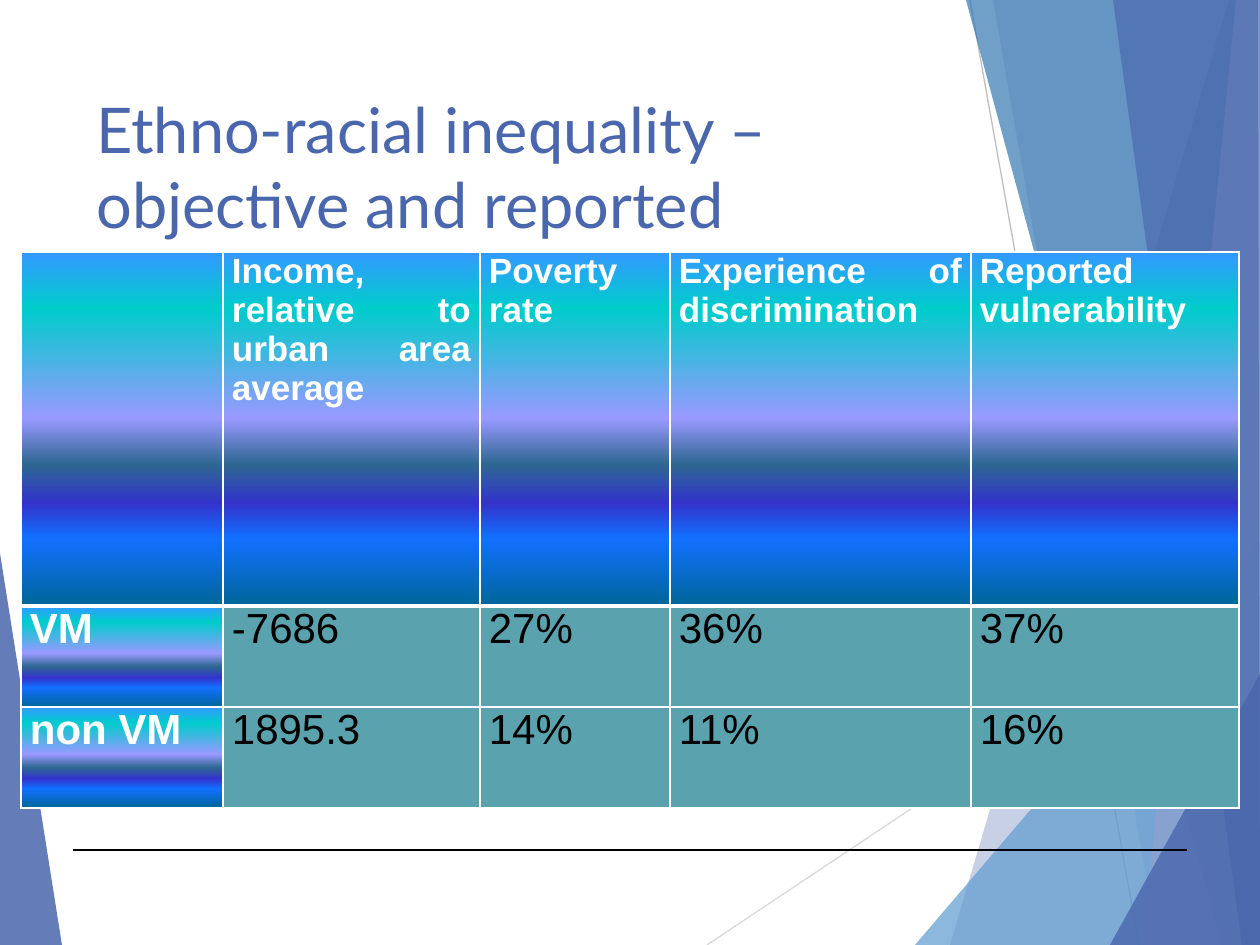
from lxml import etree
from pptx import Presentation, util as u
from pptx.dml.color import RGBColor
from pptx.enum import shapes, text
from pptx.oxml.ns import qn

# Content
TITLE = "Ethno-racial inequality – objective and reported"
ROWS = [
    ["", "Income, relative to urban area average", "Poverty rate",
     "Experience of discrimination", "Reported vulnerability"],
    ["VM", "-7686", "27%", "36%", "37%"],
    ["non VM", "1895.3", "14%", "11%", "16%"],
]
COL_WIDTHS = [202, 257, 190, 301, 268]
ROW_HEIGHTS = [354, 101, 101]
TABLE_LEFT, TABLE_TOP = 21, 252
GRADIENT = [(0, "3399FF"), (16, "00CCCC"), (47, "9999FF"), (60, "2E6792"),
            (71, "3333CC"), (81, "1170FF"), (100, "006699")]
BLUE, TEAL, WHITE, BLACK = "4A66AC", "5AA2AE", "FFFFFF", "000000"

# Backdrop, back to front: facets (points, colour, opacity) and rays (ends, colour)
W, H = 1260, 945
FACETS_LEFT = [([(0, 553), (62, H), (0, H)], BLUE, 85)]
RAYS = [((707, H, W, 576), "D9D9D9"), ((970, 0, 1139, H), "BFBFBF")]
FACETS_RIGHT = [
    ([(1229, 0), (950, H), (W, H), (W, 0)], BLUE, 30),
    ([(993, 0), (1158, H), (W, H), (W, 0)], BLUE, 20),
    ([(915, H), (W, 541), (W, H)], "629DD1", 72),
    ([(966, 0), (1222, H), (W, H), (W, 0)], "3477B2", 70),
    ([(1236, 0), (1143, H), (W, H), (W, 0)], "90A2CF", 70),
    ([(1113, 0), (1242, H), (W, H), (1258, 0)], BLUE, 65),
    ([(1110, H), (W, 674), (W, H)], BLUE, 80),
]
FOOTER_RULE = (73, 850, 1187, 850)

SCALE = 914400 / 126


def px(n):
    return u.Emu(round(n * SCALE))


def rgb(value):
    return RGBColor.from_string(value)


def add_facet(slide, points, color, opacity):
    builder = slide.shapes.build_freeform(*points[0], scale=SCALE)
    builder.add_line_segments(points[1:], close=True)
    facet = builder.convert_to_shape()
    facet.shadow.inherit = False
    facet.line.fill.background()
    facet.fill.solid()
    facet.fill.fore_color.rgb = rgb(color)
    solid_color = facet._element.spPr.find(".//" + qn("a:srgbClr"))
    etree.SubElement(solid_color, qn("a:alpha"), val=str(opacity * 1000))


def add_line(slide, ends, color):
    line = slide.shapes.add_connector(
        shapes.MSO_CONNECTOR.STRAIGHT, *[px(n) for n in ends])
    line.line.color.rgb = rgb(color)
    line.line.width = u.Pt(0.75)
    etree.SubElement(line._element.spPr, qn("a:effectLst"))


def add_run(paragraph, words, font, size, color, bold=False):
    run = paragraph.add_run()
    run.text = words
    run.font.name = font
    run.font.size = u.Pt(size)
    run.font.bold = bold
    run.font.color.rgb = rgb(color)


def fill_gradient(props):
    grad = etree.SubElement(props, qn("a:gradFill"), rotWithShape="1")
    stops = etree.SubElement(grad, qn("a:gsLst"))
    for position, color in GRADIENT:
        stop = etree.SubElement(stops, qn("a:gs"), pos=str(position * 1000))
        etree.SubElement(stop, qn("a:srgbClr"), val=color)
    etree.SubElement(grad, qn("a:lin"), ang="5400000", scaled="0")


def add_borders(props, widths):
    for index, (side, width) in enumerate(widths.items()):
        border = etree.Element(qn("a:ln" + side), w=str(u.Pt(width)))
        fill = etree.SubElement(border, qn("a:solidFill"))
        etree.SubElement(fill, qn("a:srgbClr"), val=WHITE)
        props.insert(index, border)


def style_cell(cell, words, r, c):
    heading = r == 0 or c == 0
    cell.margin_left = cell.margin_right = px(9)
    cell.margin_top = cell.margin_bottom = 0
    props = cell._tc.get_or_add_tcPr()
    if heading:
        fill_gradient(props)
    else:
        cell.fill.solid()
        cell.fill.fore_color.rgb = rgb(TEAL)
    add_borders(props, {"L": 1, "R": 1, "T": 3 if r == 1 else 1,
                        "B": 3 if r == 0 else 1})
    if words:
        paragraph = cell.text_frame.paragraphs[0]
        paragraph.alignment = text.PP_ALIGN.JUSTIFY
        add_run(paragraph, words, "Arial", 20 if r == 0 else 24,
                WHITE if heading else BLACK, heading)


def main():
    prs = Presentation()
    prs.slide_width, prs.slide_height = px(W), px(H)
    slide = prs.slides.add_slide(prs.slide_layouts[6])

    # Backdrop
    for facet in FACETS_LEFT:
        add_facet(slide, *facet)
    for ray in RAYS:
        add_line(slide, *ray)
    for facet in FACETS_RIGHT:
        add_facet(slide, *facet)

    # Title
    title = slide.shapes.add_textbox(px(84), px(84), px(874), px(181))
    title.text_frame.word_wrap = True
    title.text_frame.vertical_anchor = text.MSO_ANCHOR.TOP
    add_run(title.text_frame.paragraphs[0], TITLE, "Lato", 36, BLUE)

    # Inequality table
    table = slide.shapes.add_table(
        len(ROWS), len(COL_WIDTHS), px(TABLE_LEFT), px(TABLE_TOP),
        px(sum(COL_WIDTHS)), px(sum(ROW_HEIGHTS))).table
    table.horz_banding = False
    for column, width in zip(table.columns, COL_WIDTHS):
        column.width = px(width)
    for row, height in zip(table.rows, ROW_HEIGHTS):
        row.height = px(height)
    for r, row in enumerate(ROWS):
        for c, words in enumerate(row):
            style_cell(table.cell(r, c), words, r, c)

    # Footer rule
    add_line(slide, FOOTER_RULE, BLACK)
    prs.save("out.pptx")


if __name__ == "__main__":
    main()
